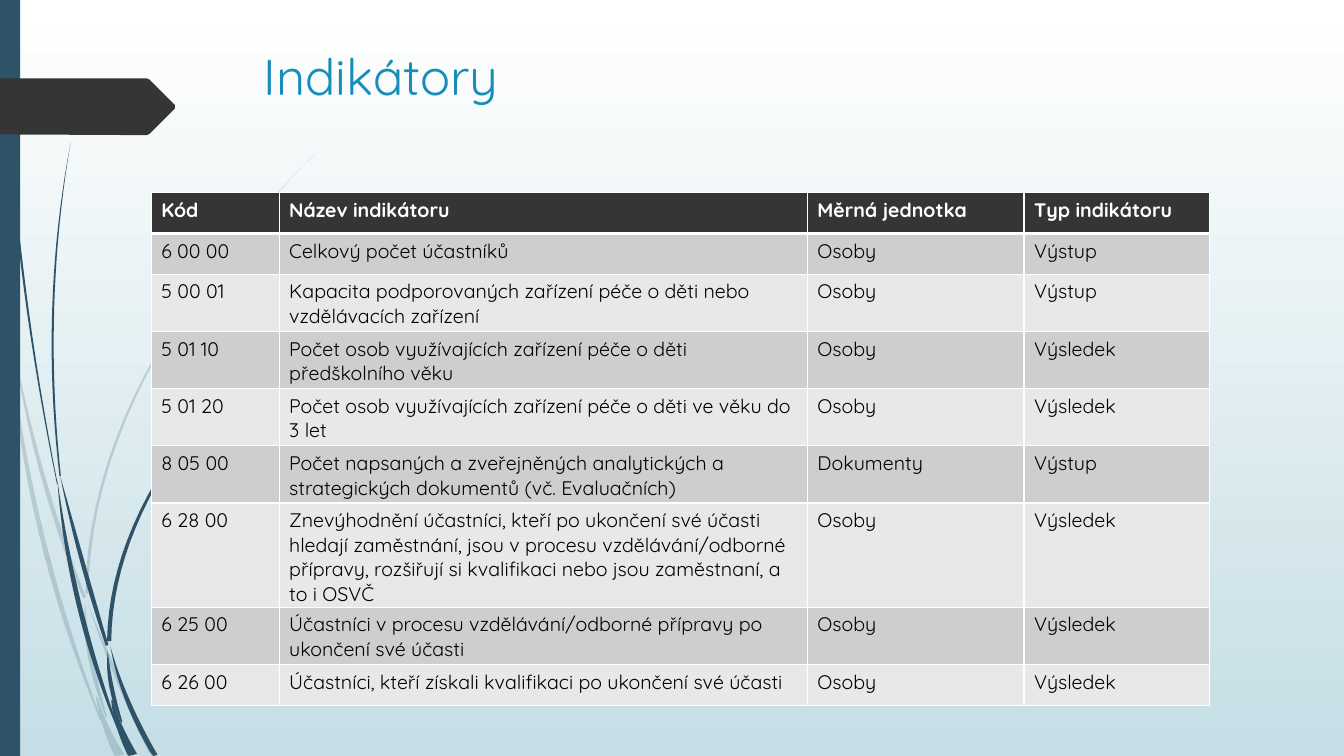
from math import hypot

from lxml.etree import SubElement
from pptx import Presentation
from pptx.dml.color import RGBColor
from pptx.enum.shapes import MSO_SHAPE
from pptx.enum.text import MSO_ANCHOR
from pptx.oxml import parse_xml
from pptx.oxml.ns import nsdecls, qn
from pptx.util import Pt

COLORS = {
    "sky": "FFFFFF", "horizon": "C5DEE5", "grass": "2E5369", "dark": "353535",
    "title": "178DBB", "white": "FFFFFF", "text": "000000",
    "odd": "CECECE", "even": "E8E8E8",
}
FONT = "Quicksand"
SLIDE_WIDTH, SLIDE_HEIGHT = 960, 540
BLADE_STEPS = 20

PALE_BLADES = [
    ((0, 209, 2), (4, 230, 2), (8, 252, 0)),
    ((10, 249, 0), (31.5, 343, 3), (60.5, 427, 2)),
    ((63, 432, 0), (85, 487, 3), (110, 541, 3.5)),
    ((8, 252, 0), (30, 383, 3.5), (72, 514, 1)),
    ((61, 431, 0), (64, 467, 3), (76, 512, 1)),
    ((62, 424, 2), (104, 268, 1.5), (225, 110, 0)),
    ((69, 498, 1), (76, 520, 4), (86, 541, 7)),
]
DARK_BLADES = [
    ((2.5, 0, 0.7), (13.5, 171, 1.5), (41, 346, 0.5)),
    ((43, 340, 0), (58.5, 400, 3), (76.5, 461, 2)),
    ((79, 462, 0), (91, 500, 3), (111, 540, 3.5)),
    ((41, 343, 0), (56.5, 432, 3.5), (84, 520, 1)),
    ((50.5, 101.5, 0), (38, 220, 1.4), (43, 340, 1)),
    ((78, 458, 3), (106, 355, 2), (187.5, 248, 0)),
    ((77, 465, 0), (79.5, 490, 3), (87, 516, 1)),
    ((80, 500, 1), (85, 518, 4), (95, 540, 6.5)),
]
TAG_OUTLINE = [(0, 56), (105, 56), (107, 57), (125, 75), (125, 77.5), (107, 95.5), (105, 96.5), (0, 96)]

COLUMN_WIDTHS = [91.4, 377.3, 154.8, 132.5]
ROW_HEIGHT = 29.2
INDICATORS = [
    ("Kód", "Název indikátoru", "Měrná jednotka", "Typ indikátoru"),
    ("6 00 00", "Celkový počet účastníků", "Osoby", "Výstup"),
    ("5 00 01", "Kapacita podporovaných zařízení péče o děti nebo vzdělávacích zařízení", "Osoby", "Výstup"),
    ("5 01 10", "Počet osob využívajících zařízení péče o děti předškolního věku", "Osoby", "Výsledek"),
    ("5 01 20", "Počet osob využívajících zařízení péče o děti ve věku do 3 let", "Osoby", "Výsledek"),
    ("8 05 00", "Počet napsaných a zveřejněných analytických a strategických dokumentů (vč. Evaluačních)",
     "Dokumenty", "Výstup"),
    ("6 28 00", "Znevýhodnění účastníci, kteří po ukončení své účasti hledají zaměstnání, jsou v procesu "
     "vzdělávání/odborné přípravy, rozšiřují si kvalifikaci nebo jsou zaměstnaní, a to i OSVČ",
     "Osoby", "Výsledek"),
    ("6 25 00", "Účastníci v procesu vzdělávání/odborné přípravy po ukončení své účasti", "Osoby", "Výsledek"),
    ("6 26 00", "Účastníci, kteří získali kvalifikaci po ukončení své účasti", "Osoby", "Výsledek"),
]


def rgb(name):
    return RGBColor.from_string(COLORS[name])


def paint(shape, color):
    shape.fill.solid()
    shape.fill.fore_color.rgb = rgb(color)
    shape.line.fill.background()
    shape.shadow.inherit = False


def add_background(slide):
    fill = slide.background.fill
    fill.gradient()
    fill.gradient_angle = 270
    for stop, color, position in zip(fill.gradient_stops, ("sky", "horizon"), (0, 1)):
        stop.color.rgb = rgb(color)
        stop.position = position


def blend(weights, values):
    return sum(w * v for w, v in zip(weights, values))


def trace_blade(blade):
    xs, ys, widths = zip(*blade)
    left, right = [], []
    for step in range(BLADE_STEPS + 1):
        t = step / BLADE_STEPS
        place = ((1 - t) * (1 - 2 * t), 4 * t * (1 - t), t * (2 * t - 1))
        slope = (4 * t - 3, 4 - 8 * t, 4 * t - 1)
        x, y = blend(place, xs), blend(place, ys)
        dx, dy = blend(slope, xs), blend(slope, ys)
        reach = max(blend(place, widths), 0) / 2 / hypot(dx, dy)
        for side, sign in ((left, 1), (right, -1)):
            side.append((max(x + sign * reach * dy, 0),
                         min(max(y - sign * reach * dx, 0), SLIDE_HEIGHT)))
    return left + right[::-1]


def add_outline(slide, outline, color, opacity=100):
    corners = [(Pt(x), Pt(y)) for x, y in outline]
    builder = slide.shapes.build_freeform(*corners[0])
    builder.add_line_segments(corners[1:], close=True)
    shape = builder.convert_to_shape()
    paint(shape, color)
    if opacity < 100:
        tint = shape.fill._xPr.find(qn("a:solidFill"))[0]
        SubElement(tint, qn("a:alpha")).set("val", str(opacity * 1000))


def add_run(frame, text, size, color, bold=False):
    run = frame.paragraphs[0].add_run()
    run.text = text
    run.font.name = FONT
    run.font.size = Pt(size)
    run.font.bold = bold
    run.font.color.rgb = rgb(color)


def add_title(slide, text):
    frame = slide.shapes.add_textbox(Pt(181.4), Pt(28.8), Pt(608.4), Pt(93.6)).text_frame
    frame.word_wrap = True
    frame.vertical_anchor = MSO_ANCHOR.TOP
    add_run(frame, text, 36, "title")


def add_borders(cell, top, bottom):
    for order, (side, width) in enumerate((("L", 1), ("R", 1), ("T", top), ("B", bottom))):
        border = parse_xml(
            f'<a:ln{side} {nsdecls("a")} w="{Pt(width)}"><a:solidFill>'
            f'<a:srgbClr val="{COLORS["white"]}"/></a:solidFill></a:ln{side}>')
        cell._tc.get_or_add_tcPr().insert(order, border)


def add_indicator_table(slide):
    table = slide.shapes.add_table(
        len(INDICATORS), len(COLUMN_WIDTHS), Pt(108), Pt(137.5),
        Pt(sum(COLUMN_WIDTHS)), Pt(ROW_HEIGHT * len(INDICATORS))).table
    table.horz_banding = False
    for column, width in zip(table.columns, COLUMN_WIDTHS):
        column.width = Pt(width)
    for r, indicator in enumerate(INDICATORS):
        table.rows[r].height = Pt(ROW_HEIGHT)
        header = r == 0
        band = "dark" if header else "odd" if r % 2 else "even"
        for c, text in enumerate(indicator):
            cell = table.cell(r, c)
            cell.fill.solid()
            cell.fill.fore_color.rgb = rgb(band)
            add_borders(cell, 3 if r == 1 else 1, 3 if header else 1)
            add_run(cell.text_frame, text, 14, "white" if header else "text", header)


def main():
    deck = Presentation()
    deck.slide_width, deck.slide_height = Pt(SLIDE_WIDTH), Pt(SLIDE_HEIGHT)
    slide = deck.slides.add_slide(deck.slide_layouts[6])
    add_background(slide)
    for blades, opacity in ((PALE_BLADES, 20), (DARK_BLADES, 100)):
        for blade in blades:
            add_outline(slide, trace_blade(blade), "grass", opacity)
    edge = slide.shapes.add_shape(MSO_SHAPE.RECTANGLE, Pt(0), Pt(0), Pt(14.4), Pt(SLIDE_HEIGHT))
    paint(edge, "grass")
    add_outline(slide, TAG_OUTLINE, "dark")
    add_title(slide, "Indikátory")
    add_indicator_table(slide)
    deck.save("out.pptx")


if __name__ == "__main__":
    main()
